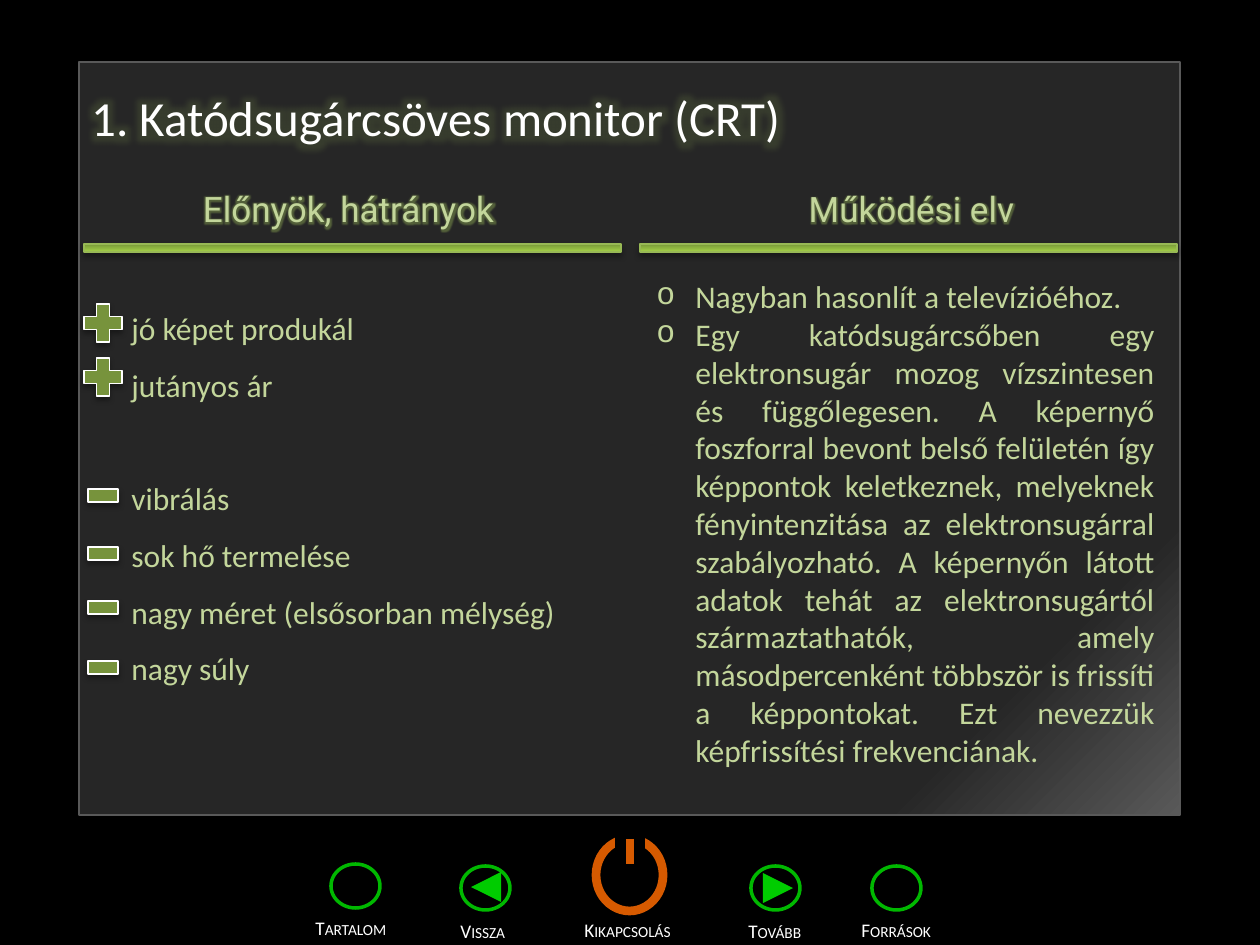
from dataclasses import dataclass

from lxml import etree
from pptx import Presentation
from pptx import util as u
from pptx.dml.color import RGBColor
from pptx.enum import shapes, text
from pptx.oxml.ns import qn

SCALE = 914400 / 126


@dataclass(frozen=True)
class Theme:
    """Colours, fonts and type sizes of the slide."""
    black: str = "000000"
    white: str = "FFFFFF"
    panel: str = "262626"
    edge: str = "595959"
    power: str = "D65A00"
    ring: str = "00B800"
    arrow: str = "00CC00"
    bar_dark: str = "779737"
    bar_light: str = "9DC746"
    bar_edge: str = "98B955"
    sign: str = "77933C"
    pale: str = "C3D69B"
    glow: str = "9BBB59"
    body_font: str = "Calibri"
    heading_font: str = "Roboto"
    title_size: int = 28
    heading_size: int = 20
    body_size: int = 18
    label_size: int = 11


THEME = Theme()


def px(*lengths):
    """Turn pixels into a list of EMU lengths."""
    return [u.Emu(round(length * SCALE)) for length in lengths]


def rgb(colour):
    """Turn a hex string into a colour."""
    return RGBColor.from_string(colour)


def add_node(parent, tag, **attributes):
    """Append a DrawingML element and return it."""
    return etree.SubElement(parent, qn(tag), {k: str(v) for k, v in attributes.items()})


def add_colour(parent, colour, opacity):
    """Append a colour with its opacity in percent."""
    add_node(add_node(parent, "a:srgbClr", val=colour), "a:alpha", val=opacity * 1000)


def add_figure(slide, preset, box, fill=None, line=None, width=0.75):
    """Add a flat preset shape with an optional fill and outline."""
    figure = slide.shapes.add_shape(preset, *px(*box))
    figure.shadow.inherit = False
    if fill:
        figure.fill.solid()
        figure.fill.fore_color.rgb = rgb(fill)
    else:
        figure.fill.background()
    if line:
        figure.line.color.rgb = rgb(line)
        figure.line.width = u.Pt(width)
    else:
        figure.line.fill.background()
    return figure


def set_gradient(figure, stops, angle):
    """Fill a shape with a two-stop linear gradient."""
    figure.fill.gradient()
    figure.fill.gradient_angle = angle
    for stop, (position, colour) in zip(figure.fill.gradient_stops, stops):
        stop.position = position
        stop.color.rgb = rgb(colour)


def cast_shadow(figure):
    """Give a shape a soft shadow below it."""
    effects = figure._element.spPr.find(qn("a:effectLst"))
    shadow = add_node(effects, "a:outerShdw", blurRad=u.Pt(3.1), dist=u.Pt(1.8),
                      dir=5400000, algn="t", rotWithShape=0)
    add_colour(shadow, THEME.black, 35)


def add_text(slide, box, lines, size, colour, font=THEME.body_font,
             anchor=text.MSO_ANCHOR.TOP, align=text.PP_ALIGN.LEFT, spacing=None):
    """Add a wrapping text box and return its paragraphs."""
    frame = slide.shapes.add_textbox(*px(*box)).text_frame
    frame.word_wrap = True
    frame.vertical_anchor = anchor
    frame.text = "\n".join(lines)
    for paragraph in frame.paragraphs:
        paragraph.alignment = align
        paragraph.line_spacing = spacing
        paragraph.font.size = u.Pt(size)
        paragraph.font.name = font
        paragraph.font.color.rgb = rgb(colour)
    return frame.paragraphs


def set_indent(paragraph, left, first=0):
    """Set the left margin and first-line indent."""
    margin, indent = px(left, first)
    properties = paragraph._p.get_or_add_pPr()
    properties.set("marL", str(margin))
    properties.set("indent", str(indent))
    return properties


def add_bullet(paragraph):
    """Hang a round letter bullet before a paragraph."""
    properties = set_indent(paragraph, 39, -39)
    defaults = properties.find(qn("a:defRPr"))
    for tag, attributes in (("a:buFont", {"typeface": "Courier New"}),
                            ("a:buChar", {"char": "o"})):
        defaults.addprevious(add_node(properties, tag, **attributes))


def add_glow(paragraph, radius, opacity):
    """Let the text of a paragraph glow."""
    for run in paragraph.runs:
        effects = add_node(run._r.get_or_add_rPr(), "a:effectLst")
        add_colour(add_node(effects, "a:glow", rad=u.Pt(radius)), THEME.glow, opacity)


def add_label(slide, box, name):
    """Add a navigation label in small capitals."""
    label, = add_text(slide, box, [name], THEME.label_size, THEME.white)
    label.font._element.set("cap", "small")


def add_navigation(slide):
    """Add the row of navigation buttons under the panel."""
    preset = shapes.MSO_SHAPE
    add_figure(slide, preset.OVAL, (596, 839, 67, 72), line=THEME.power, width=5)
    add_figure(slide, preset.RECTANGLE, (615, 828, 30, 23), THEME.black)
    switch = slide.shapes.add_connector(shapes.MSO_CONNECTOR.STRAIGHT,
                                        *px(630, 839, 630, 864))
    switch.line.color.rgb = rgb(THEME.power)
    switch.line.width = u.Pt(5)
    add_node(switch._element.spPr, "a:effectLst")

    for left, top in ((331, 864), (461, 866), (751, 866), (872, 866)):
        add_figure(slide, preset.OVAL, (left, top, 49, 44), line=THEME.ring, width=2)
    for left, top, turn in ((471, 872, 270), (763, 873, 90)):
        arrow = add_figure(slide, preset.FLOWCHART_EXTRACT, (left, top, 30, 30), THEME.arrow)
        arrow.rotation = turn
    for left, top, width, name in ((303, 910, 105, "Tartalom"), (448, 913, 74, "Vissza"),
                                   (572, 912, 123, "Kikapcsolás"),
                                   (736, 913, 87, "Tovább"), (849, 912, 96, "Források")):
        add_label(slide, (left, top, width, 36), name)


def add_heading(slide, left, bar_left, name):
    """Add a column heading with the bar under it."""
    bar = add_figure(slide, shapes.MSO_SHAPE.RECTANGLE, (bar_left, 244, 537, 8),
                     line=THEME.bar_edge)
    set_gradient(bar, ((0, THEME.bar_dark), (0.8, THEME.bar_light)), 270)
    cast_shadow(bar)
    heading, = add_text(slide, (left, 155, 537, 113), [name], THEME.heading_size, THEME.pale,
                        THEME.heading_font, text.MSO_ANCHOR.MIDDLE,
                        text.PP_ALIGN.CENTER, 0.9)
    add_glow(heading, 5, 40)


def add_signs(slide, preset, left, size, tops):
    """Add a column of equal plus or minus signs."""
    for top in tops:
        sign = add_figure(slide, preset, (left, top, *size), THEME.sign, THEME.white)
        if preset == shapes.MSO_SHAPE.CROSS:
            sign.adjustments[0] = 0.33
        cast_shadow(sign)


def main():
    """Build and save the slide."""
    deck = Presentation()
    deck.slide_width, deck.slide_height = px(1260, 945)
    slide = deck.slides.add_slide(deck.slide_layouts[6])
    slide.background.fill.solid()
    slide.background.fill.fore_color.rgb = rgb(THEME.black)

    panel = add_figure(slide, shapes.MSO_SHAPE.RECTANGLE, (79, 62, 1101, 753),
                       line=THEME.edge, width=1.5)
    set_gradient(panel, ((0.84, THEME.panel), (1, THEME.edge)), 315)
    add_navigation(slide)

    title, = add_text(slide, (79, 38, 1101, 158), ["1. Katódsugárcsöves monitor (CRT)"],
                      THEME.title_size, THEME.white, anchor=text.MSO_ANCHOR.MIDDLE)
    add_glow(title, 18, 15)
    add_heading(slide, 80, 84, "Előnyök, hátrányok")
    add_heading(slide, 643, 640, "Működési elv")

    principle = add_text(slide, (644, 271, 523, 585), [
        "Nagyban hasonlít a televízióéhoz.",
        "Egy katódsugárcsőben egy elektronsugár mozog vízszintesen és függőlegesen. "
        "A képernyő foszforral bevont belső felületén így képpontok keletkeznek, melyeknek "
        "fényintenzitása az elektronsugárral szabályozható. A képernyőn látott adatok tehát "
        "az elektronsugártól származtathatók, amely másodpercenként többször is frissíti "
        "a képpontokat. Ezt nevezzük képfrissítési frekvenciának.",
    ], THEME.body_size, THEME.pale, align=text.PP_ALIGN.JUSTIFY)
    for paragraph in principle:
        add_bullet(paragraph)

    pros = ["jó képet produkál", "jutányos ár"]
    cons = ["vibrálás", "sok hő termelése", "nagy méret (elsősorban mélység)", "nagy súly"]
    points = add_text(slide, (84, 284, 537, 451), pros + cons, THEME.body_size, THEME.pale,
                      spacing=1.5)
    for paragraph in points:
        set_indent(paragraph, 35)
    points[len(pros)].space_before = u.Pt(32.4)
    add_signs(slide, shapes.MSO_SHAPE.CROSS, 84, (38, 38), (304, 358))
    add_signs(slide, shapes.MSO_SHAPE.RECTANGLE, 88, (30, 13), (489, 547, 601, 661))

    deck.save("out.pptx")


if __name__ == "__main__":
    main()
